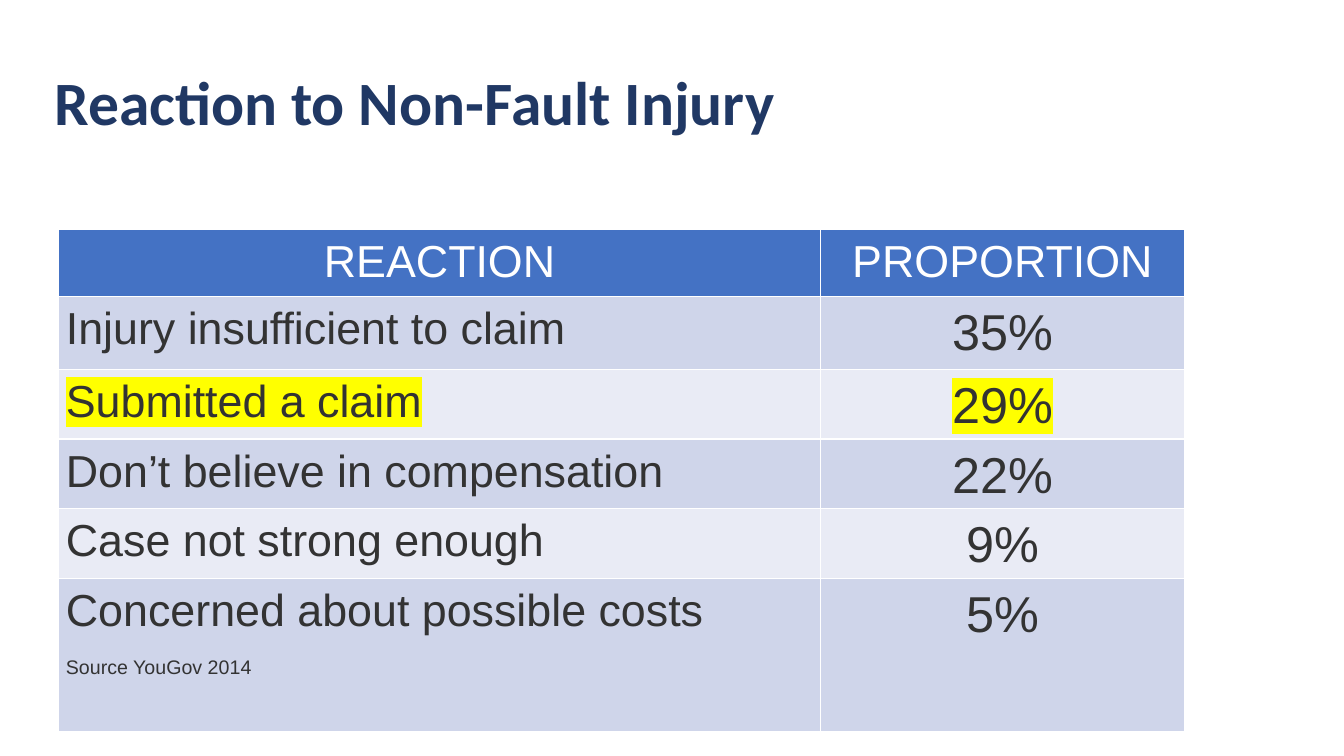
import lxml.etree
import pptx
import pptx.dml.color
import pptx.enum.text
import pptx.oxml.ns
import pptx.util

Cm = pptx.util.Cm
Pt = pptx.util.Pt
qn = pptx.oxml.ns.qn
ALIGN = pptx.enum.text.PP_ALIGN
ANCHOR = pptx.enum.text.MSO_ANCHOR

NAVY, BLUE, WHITE, GREY = "203864", "4472C4", "FFFFFF", "333333"
BANDS = ["CFD5EA", "E9EBF5"]
YELLOW = "FFFF00"


def rgb(value):
    return pptx.dml.color.RGBColor.from_string(value)


def write(p, text, size=32, color=GREY, font="Arial", bold=False,
          align=ALIGN.LEFT, spacing=1.15, after=12.6, highlight=None):
    p.alignment = align
    p.line_spacing = spacing
    p.space_after = Pt(after)
    r = p.add_run()
    r.text = text
    r.font.size = Pt(size)
    r.font.bold = bold
    r.font.color.rgb = rgb(color)
    if highlight:
        mark = lxml.etree.SubElement(r.font._element, qn("a:highlight"))
        lxml.etree.SubElement(mark, qn("a:srgbClr"), val=highlight)
    r.font.name = font


class Deck:
    def __init__(self, width, height):
        self.prs = pptx.Presentation()
        self.prs.slide_width = Cm(width)
        self.prs.slide_height = Cm(height)
        self.s = self.prs.slides.add_slide(self.prs.slide_layouts[6])

    def title(self, text, x, y, w, h):
        tf = self.s.shapes.add_textbox(Cm(x), Cm(y), Cm(w), Cm(h)).text_frame
        tf.word_wrap = True
        tf.vertical_anchor = ANCHOR.MIDDLE
        write(tf.paragraphs[0], text, size=44, color=NAVY, font="Calibri",
              bold=True, spacing=0.9, after=0)

    def table(self, x, y, widths, heights):
        shape = self.s.shapes.add_table(
            len(heights), len(widths), Cm(x), Cm(y),
            Cm(sum(widths)), Cm(sum(heights)))
        for column, width in zip(shape.table.columns, widths):
            column.width = Cm(width)
        for row, height in zip(shape.table.rows, heights):
            row.height = Cm(height)
        return shape.table

    def cell(self, cell, lines, fill, **style):
        cell.margin_left = cell.margin_right = Cm(0.18)
        cell.margin_top = cell.margin_bottom = 0
        cell.fill.solid()
        cell.fill.fore_color.rgb = rgb(fill)
        self.borders(cell)
        tf = cell.text_frame
        for i, (text, size) in enumerate(lines):
            p = tf.add_paragraph() if i else tf.paragraphs[0]
            write(p, text, size=size, **style)

    def borders(self, cell):
        tcPr = cell._tc.get_or_add_tcPr()
        for i, side in enumerate(("lnL", "lnR", "lnT", "lnB")):
            ln = lxml.etree.Element(qn("a:" + side), w=str(Pt(1)))
            fill = lxml.etree.SubElement(ln, qn("a:solidFill"))
            lxml.etree.SubElement(fill, qn("a:srgbClr"), val=WHITE)
            tcPr.insert(i, ln)


def main():
    deck = Deck(33.87, 19.05)
    deck.title("Reaction to Non-Fault Injury", 1.12, 0.81, 21.89, 3.68)

    reactions = [
        ("Injury insufficient to claim", "35%"),
        ("Submitted a claim", "29%"),
        ("Don’t believe in compensation", "22%"),
        ("Case not strong enough", "9%"),
        ("Concerned about possible costs", "5%"),
    ]
    source = ("Source YouGov 2014", 14)
    tbl = deck.table(1.48, 5.79, [19.2, 9.17],
                     [1.68, 1.84, 1.68, 1.68, 1.68, 3.86])

    for col, heading in enumerate(("REACTION", "PROPORTION")):
        deck.cell(tbl.cell(0, col), [(heading, 32)], BLUE,
                  color=WHITE, align=ALIGN.CENTER)
    for i, (reaction, share) in enumerate(reactions):
        fill = BANDS[i % 2]
        mark = YELLOW if reaction == "Submitted a claim" else None
        lines = [(reaction, 32)]
        if i == len(reactions) - 1:
            lines.append(source)
        deck.cell(tbl.cell(i + 1, 0), lines, fill, highlight=mark)
        deck.cell(tbl.cell(i + 1, 1), [(share, 36)], fill,
                  align=ALIGN.CENTER, highlight=mark)

    deck.prs.save("out.pptx")


if __name__ == "__main__":
    main()
